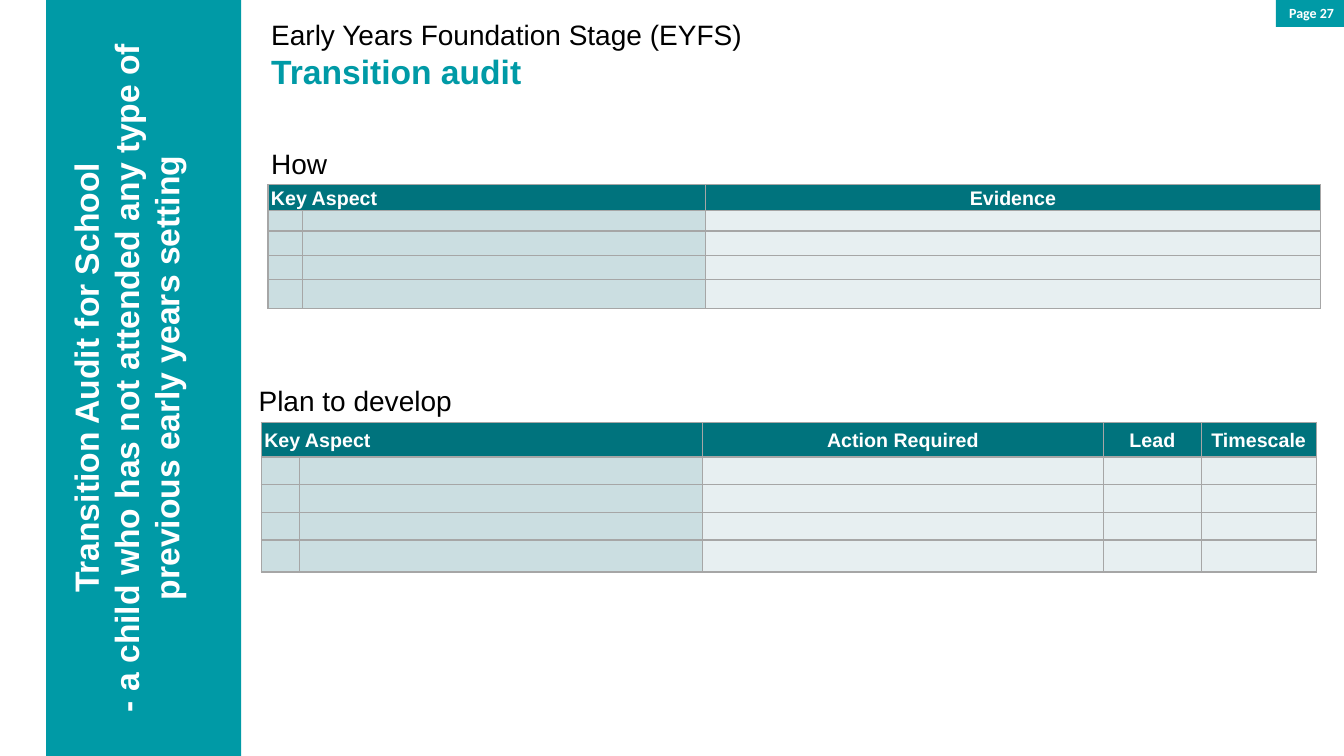
from lxml.etree import SubElement
from pptx import Presentation
from pptx.dml.color import RGBColor
from pptx.enum.shapes import MSO_SHAPE
from pptx.enum.text import MSO_ANCHOR, PP_ALIGN
from pptx.oxml import parse_xml
from pptx.oxml.ns import nsdecls, qn
from pptx.util import Inches, Pt

COLORS = {
    "teal": "009AA6",
    "header": "00737D",
    "aspect": "CBDEE1",
    "detail": "E7EFF1",
    "border": "A6A6A6",
    "white": "FFFFFF",
    "black": "000000",
}
WIDTH, HEIGHT = Inches(13.33), Inches(7.5)
COLUMN, ROW = WIDTH / 160, HEIGHT / 90


def across(columns):
    return round(columns * COLUMN)


def down(rows):
    return round(rows * ROW)


def place(box):
    left, top, width, height = box
    return across(left), down(top), across(width), down(height)


def rgb(name):
    return RGBColor.from_string(COLORS[name])


def write(paragraph, wording, size, color, bold=False, align=PP_ALIGN.LEFT, face="Arial"):
    paragraph.text = wording
    paragraph.alignment = align
    for run in paragraph.runs:
        run.font.name = face
        run.font.size = Pt(size)
        run.font.bold = bold
        run.font.color.rgb = rgb(color)


def add_panel(slide, box):
    panel = slide.shapes.add_shape(MSO_SHAPE.RECTANGLE, *place(box))
    panel.shadow.inherit = False
    panel.fill.solid()
    panel.fill.fore_color.rgb = rgb("teal")
    panel.line.fill.background()
    panel.text_frame.word_wrap = True
    return panel.text_frame


def add_sidebar(slide, box, lines):
    sidebar = add_panel(slide, box)
    sidebar.vertical_anchor = MSO_ANCHOR.MIDDLE
    sidebar._txBody.bodyPr.set("vert", "vert270")
    sidebar.margin_right = across(box[2] * 0.21)
    for index, line in enumerate(lines):
        paragraph = sidebar.add_paragraph() if index else sidebar.paragraphs[0]
        write(paragraph, line, 24, "white", True, PP_ALIGN.CENTER)


def add_page_tag(slide, box, wording):
    tag = add_panel(slide, box)
    tag.vertical_anchor = MSO_ANCHOR.TOP
    write(tag.paragraphs[0], wording, 10, "white", True, PP_ALIGN.RIGHT, "Calibri")


def add_text(slide, box):
    frame = slide.shapes.add_textbox(*place(box)).text_frame
    frame.word_wrap = True
    return frame


def add_title(slide, box, stage, topic):
    title = add_text(slide, box)
    write(title.paragraphs[0], stage, 20, "black")
    write(title.add_paragraph(), topic, 24, "teal", True)


def style_cell(cell, color):
    cell.margin_left = cell.margin_right = Inches(0.03)
    cell.margin_top = cell.margin_bottom = 0
    cell.vertical_anchor = MSO_ANCHOR.MIDDLE
    cell.fill.solid()
    cell.fill.fore_color.rgb = rgb(color)
    properties = cell._tc.get_or_add_tcPr()
    for index, side in enumerate("LRTB"):
        properties.insert(index, parse_xml(
            f'<a:ln{side} {nsdecls("a")} w="12700"><a:solidFill>'
            f'<a:srgbClr val="{COLORS["border"]}"/></a:solidFill></a:ln{side}>'))


def add_section(slide, box, heading, indent, headers, columns, rows):
    left, top, width, height = box
    heading_rows = 5.2
    write(add_text(slide, (left, top, width, heading_rows)).paragraphs[0], heading, 20, "black")
    table_box = (left + indent, top + heading_rows, width - indent, height - heading_rows)
    audit = slide.shapes.add_table(len(rows), len(columns), *place(table_box)).table
    for column, share in zip(audit.columns, columns):
        column.width = across(share)
    for row, share in zip(audit.rows, rows):
        row.height = down(share)

    for row_index, row in enumerate(audit.rows):
        for column_index, cell in enumerate(row.cells):
            body = "aspect" if column_index < 2 else "detail"
            style_cell(cell, body if row_index else "header")
            if row_index:
                end = SubElement(cell.text_frame.paragraphs[0]._p, qn("a:endParaRPr"))
                end.set("sz", "1000")

    audit.cell(0, 0).merge(audit.cell(0, 1))
    for index, header in enumerate(headers):
        paragraph = audit.cell(0, index + 1 if index else 0).text_frame.paragraphs[0]
        align = PP_ALIGN.CENTER if index else PP_ALIGN.LEFT
        write(paragraph, header, 14, "white", True, align)
        paragraph.line_spacing = 1.07
        paragraph.space_after = Pt(8)


def main():
    deck = Presentation()
    deck.slide_width, deck.slide_height = WIDTH, HEIGHT
    slide = deck.slides.add_slide(deck.slide_layouts[6])
    add_sidebar(slide, (5.5, 0, 23.2, 90), [
        "Transition Audit for School",
        "- a child who has not attended any type of previous early years setting",
    ])
    add_title(slide, (31.1, 1.44, 65.9, 10.1),
              "Early Years Foundation Stage (EYFS)", "Transition audit")
    add_section(slide, (31.1, 16.8, 126, 19.9), "How", 0.8,
                ["Key Aspect", "Evidence"],
                [4.1, 48, 73.2], [3.1, 2.4, 2.9, 2.9, 3.4])
    add_section(slide, (29.6, 45.1, 127, 23), "Plan to develop", 1.5,
                ["Key Aspect", "Action Required", "Lead", "Timescale"],
                [4.6, 47.9, 47.8, 11.6, 13.7], [4.1, 3.3, 3.3, 3.3, 3.8])
    add_page_tag(slide, (151.9, 0, 8.1, 3.2), "Page 27")
    deck.save("out.pptx")


if __name__ == "__main__":
    main()
